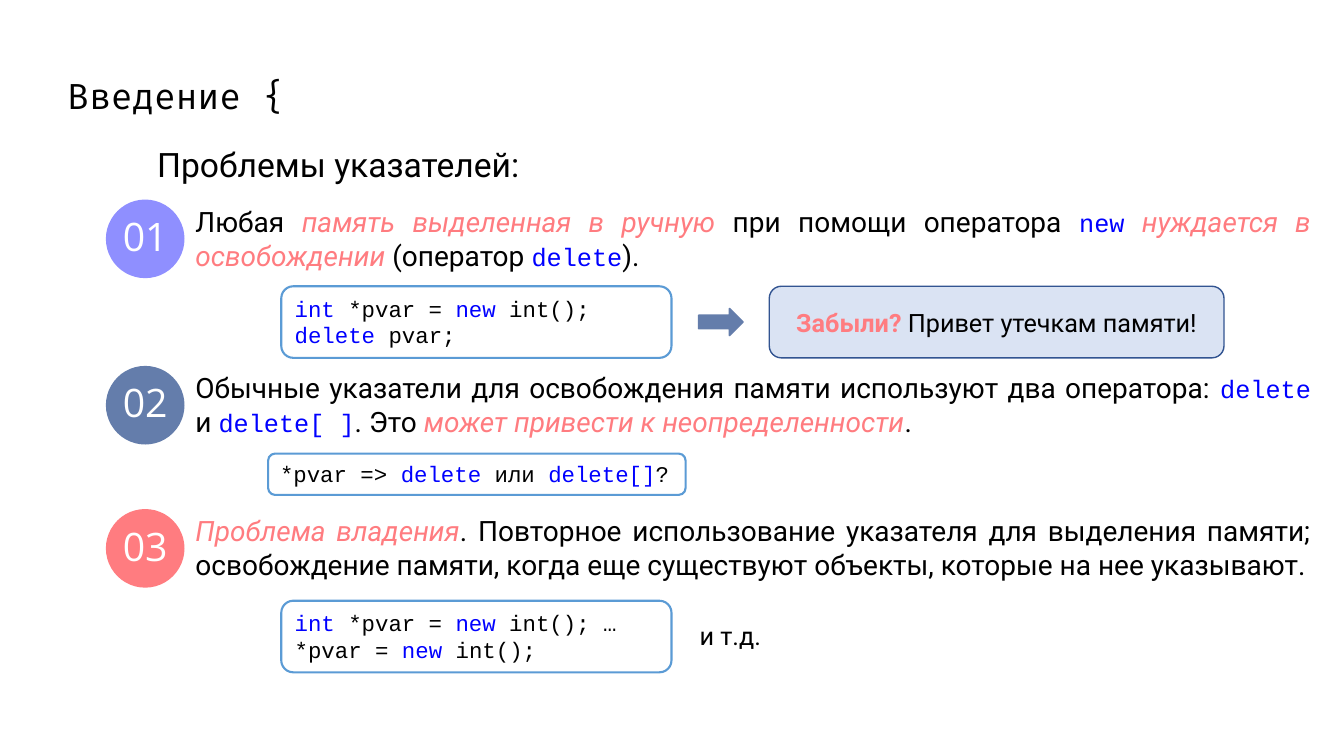
"""Build the slide about the problems of raw pointers."""
from dataclasses import dataclass, replace

from lxml import etree
from pptx import Presentation
from pptx.dml.color import RGBColor
from pptx.enum import shapes, text
from pptx.oxml import ns
from pptx.util import Inches, Pt


@dataclass(frozen=True)
class Style:
    """Character formatting of a span."""
    name: str
    size: float
    color: str
    bold: bool = False
    italic: bool = False


@dataclass(frozen=True)
class Theme:
    """Colours and type styles of the slide."""
    black: str = "000000"
    white: str = "FFFFFF"
    blue: str = "0000FF"
    slate: str = "647DAB"
    coral: str = "FF7C80"
    code_line: str = "5B9BD5"
    warning_fill: str = "DAE3F3"
    warning_line: str = "325491"
    title: Style = Style("Fira Code", 25.2, black)
    heading: Style = Style("Roboto", 24, black)
    number: Style = Style("Open Sans", 28, white)
    body: Style = Style("Roboto", 20, black)
    accent: Style = Style("Roboto", 20, coral, italic=True)
    keyword: Style = Style("Courier New", 18, blue)
    code: Style = Style("Courier New", 16, black)
    code_keyword: Style = Style("Courier New", 16, blue)
    note: Style = Style("Roboto", 18, black)
    alert: Style = Style("Roboto", 18, coral, bold=True)


@dataclass(frozen=True)
class Span:
    """A stretch of text in one style."""
    words: str
    style: Style


@dataclass(frozen=True)
class Area:
    """A rectangle on the slide, in inches."""
    left: float
    top: float
    width: float
    height: float

    def lengths(self) -> list:
        """Return the four measures as lengths."""
        return [Inches(side) for side in (self.left, self.top, self.width, self.height)]


@dataclass(frozen=True)
class Problem:
    """A numbered statement with its badge."""
    number: str
    top: float
    color: str
    spans: tuple
    opacity: int = 100


@dataclass(frozen=True)
class Panel:
    """A rounded box with lines of text."""
    area: Area
    lines: tuple
    line_color: str
    line_width: float = 1.5
    fill: str | None = None
    align: text.PP_ALIGN = text.PP_ALIGN.LEFT
    anchor: text.MSO_ANCHOR = text.MSO_ANCHOR.TOP
    grow: bool = True


THEME = Theme()


def plain(words: str) -> Span:
    """Make a span of body text."""
    return Span(words, THEME.body)


def accent(words: str) -> Span:
    """Make a highlighted span of body text."""
    return Span(words, THEME.accent)


def keyword(words: str) -> Span:
    """Make an operator name inside body text."""
    return Span(words, THEME.keyword)


def code(words: str) -> Span:
    """Make a span of code."""
    return Span(words, THEME.code)


def code_keyword(words: str) -> Span:
    """Make a keyword inside code."""
    return Span(words, THEME.code_keyword)


PROBLEMS = (
    Problem("01", 1.98, THEME.blue, (
        plain("Любая "), accent("память выделенная в ручную "),
        plain("при помощи оператора "), keyword("new"), plain(" "),
        accent("нуждается в освобождении"), plain(" (оператор "),
        keyword("delete"), plain(").")), opacity=44),
    Problem("02", 3.63, THEME.slate, (
        plain("Обычные указатели для освобождения памяти используют два оператора: "),
        keyword("delete"), plain(" и "), keyword("delete[ ]"), plain(". Это "),
        accent("может привести к неопределенности"), plain("."))),
    Problem("03", 5.05, THEME.coral, (
        accent("Проблема владения"),
        plain(". Повторное использование указателя для выделения памяти; освобождение "
              "памяти, когда еще существуют объекты, которые на нее указывают."))),
)

PANELS = (
    Panel(Area(2.79, 2.84, 3.87, 0.71), (
        (code_keyword("int "), code("*pvar = "), code_keyword("new"), code(" int();")),
        (code_keyword("delete "), code("pvar;"))), THEME.code_line),
    Panel(Area(7.63, 2.84, 4.51, 0.71), (
        (Span("Забыли? ", THEME.alert), Span("Привет утечкам памяти!", THEME.note)),),
        THEME.warning_line, 1, THEME.warning_fill, text.PP_ALIGN.CENTER,
        text.MSO_ANCHOR.MIDDLE, False),
    Panel(Area(2.66, 4.5, 4.14, 0.41), (
        (code("*pvar => "), code_keyword("delete "), code("или "),
         code_keyword("delete[]"), code("?")),), THEME.code_line),
    Panel(Area(2.79, 5.96, 3.87, 0.71), (
        (code_keyword("int "), code("*pvar = "), code_keyword("new"), code(" int(); …")),
        (code("*pvar = "), code_keyword("new"), code(" int();"))), THEME.code_line),
)


def set_font(font, field: str, value) -> None:
    """Set one formatting field on a font."""
    if field == "color":
        font.color.rgb = RGBColor.from_string(value)
    else:
        setattr(font, field, Pt(value) if field == "size" else value)


def write(frame, lines: tuple, align=text.PP_ALIGN.LEFT, anchor=text.MSO_ANCHOR.TOP,
          spacing: float | None = None, grow: bool = False, wrap: bool = True) -> None:
    """Fill a text frame, keeping shared formatting on the paragraphs."""
    frame.word_wrap = wrap
    frame.vertical_anchor = anchor
    frame.auto_size = text.MSO_AUTO_SIZE.SHAPE_TO_FIT_TEXT if grow else text.MSO_AUTO_SIZE.NONE
    for index, spans in enumerate(lines):
        paragraph = frame.add_paragraph() if index else frame.paragraphs[0]
        paragraph.alignment = align
        paragraph.line_spacing = spacing
        runs = [paragraph.add_run() for _ in spans]
        for run, span in zip(runs, spans):
            run.text = span.words
        for field in ("name", "size", "color", "bold", "italic"):
            values = [getattr(span.style, field) for span in spans]
            if len(set(values)) == 1:
                set_font(paragraph.font, field, values[0])
            else:
                for run, value in zip(runs, values):
                    set_font(run.font, field, value)


def add_figure(owner, kind, area: Area, fill: str | None, line: str | None = None,
               width: float = 1):
    """Add a flat preset shape."""
    figure = owner.add_shape(kind, *area.lengths())
    figure.shadow.inherit = False
    if fill:
        figure.fill.solid()
        figure.fill.fore_color.rgb = RGBColor.from_string(fill)
    else:
        figure.fill.background()
    if line:
        figure.line.color.rgb = RGBColor.from_string(line)
        figure.line.width = Pt(width)
    else:
        figure.line.fill.background()
    return figure


def add_text(owner, area: Area, spans: tuple, **options):
    """Add a text box of one paragraph and return its frame."""
    frame = owner.add_textbox(*area.lengths()).text_frame
    write(frame, (spans,), **options)
    return frame


def add_problem(page, problem: Problem) -> None:
    """Draw a numbered badge and its statement."""
    badge = page.shapes.add_group_shape().shapes
    circle = Area(1.05, problem.top, 0.78, 0.78)
    disc = add_figure(badge, shapes.MSO_SHAPE.OVAL, circle, problem.color)
    if problem.opacity < 100:
        color = disc.element.spPr.find(ns.qn("a:solidFill"))[0]
        etree.SubElement(color, ns.qn("a:alpha"), val=str(problem.opacity * 1000))
    label = replace(circle, top=problem.top + 0.12, height=0.54)
    frame = add_text(badge, label, (Span(problem.number, THEME.number),), spacing=0.9,
                     align=text.PP_ALIGN.CENTER, anchor=text.MSO_ANCHOR.MIDDLE)
    for side in ("left", "top", "right", "bottom"):
        setattr(frame, f"margin_{side}", Inches(0.13))
    add_text(page.shapes, Area(1.84, problem.top, 11.26, 0.77), problem.spans,
             align=text.PP_ALIGN.JUSTIFY, grow=True)


def add_panel(page, panel: Panel) -> None:
    """Draw a rounded box with its text."""
    figure = add_figure(page.shapes, shapes.MSO_SHAPE.ROUNDED_RECTANGLE, panel.area,
                        panel.fill, panel.line_color, panel.line_width)
    write(figure.text_frame, panel.lines, panel.align, panel.anchor, grow=panel.grow)


def main() -> None:
    """Build and save the deck."""
    deck = Presentation()
    deck.slide_width, deck.slide_height = Inches(13.33), Inches(7.5)
    page = deck.slides.add_slide(deck.slide_layouts[6])
    add_text(page.shapes, Area(0.57, 0.73, 12.53, 0.49), (Span("Введение {", THEME.title),),
             anchor=text.MSO_ANCHOR.MIDDLE, spacing=0.9)
    heading = add_text(page.shapes, Area(0.72, 1.35, 12.38, 4.8),
                       (Span("Проблемы указателей:", THEME.heading),),
                       align=text.PP_ALIGN.JUSTIFY, spacing=1.07)
    properties = heading.paragraphs[0]._p.get_or_add_pPr()
    properties.set("marL", str(Inches(0.25)))
    properties.set("indent", str(Inches(0.49)))
    for problem in PROBLEMS:
        add_problem(page, problem)
    for panel in PANELS:
        add_panel(page, panel)
    add_figure(page.shapes, shapes.MSO_SHAPE.RIGHT_ARROW, Area(6.93, 3.06, 0.44, 0.27),
               THEME.slate, THEME.slate)
    add_text(page.shapes, Area(6.84, 6.11, 0.82, 0.4), (Span("и т.д.", THEME.note),),
             grow=True, wrap=False)
    deck.save("out.pptx")


if __name__ == "__main__":
    main()
